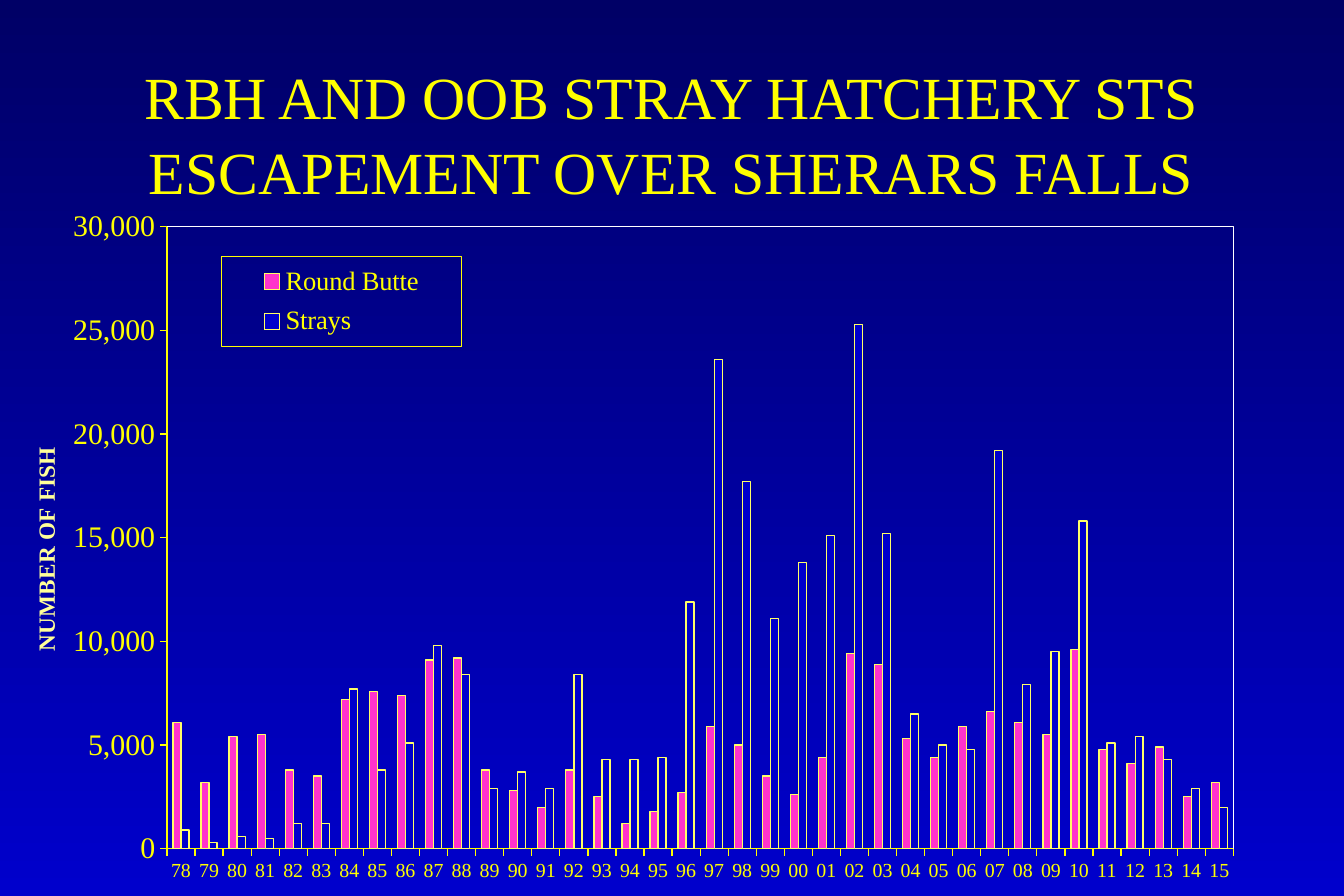
from dataclasses import dataclass

from lxml import etree
from pptx import Presentation
from pptx import oxml
from pptx.chart.data import CategoryChartData
from pptx.dml.color import RGBColor
from pptx.enum import chart as charts, text
from pptx.oxml import ns
from pptx.util import Cm, Pt

FONT = "Times New Roman"
YELLOW = "FFFF00"
PALE_YELLOW = "FFFF99"
BAR_EDGE = "FFFF66"
WHITE = "FFFFFF"
YEARS = [f"{year % 100:02d}" for year in range(1978, 2016)]


@dataclass
class FishSeries:
    name: str
    colour: str
    counts: list[int]


@dataclass
class AxisStyle:
    axis: object
    size: int
    number_format: str


FISH = [
    FishSeries("Round Butte", "FF33CC", [
        6100, 3200, 5400, 5500, 3800, 3500, 7200, 7600, 7400, 9100,
        9200, 3800, 2800, 2000, 3800, 2500, 1200, 1800, 2700, 5900,
        5000, 3500, 2600, 4400, 9400, 8900, 5300, 4400, 5900, 6600,
        6100, 5500, 9600, 4800, 4100, 4900, 2500, 3200]),
    FishSeries("Strays", "0000CC", [
        900, 300, 600, 500, 1200, 1200, 7700, 3800, 5100, 9800,
        8400, 2900, 3700, 2900, 8400, 4300, 4300, 4400, 11900, 23600,
        17700, 11100, 13800, 15100, 25300, 15200, 6500, 5000, 4800, 19200,
        7900, 9500, 15800, 5100, 5400, 4300, 2900, 2000]),
]


def rgb(colour: str) -> RGBColor:
    return RGBColor.from_string(colour)


def format_font(font, size: int, colour: str = YELLOW, bold: bool = False) -> None:
    font.name = FONT
    font.size = Pt(size)
    font.bold = bold
    font.color.rgb = rgb(colour)


def format_line(line, colour: str = YELLOW) -> None:
    line.color.rgb = rgb(colour)
    line.width = Pt(0.75)


def write_text(frame, words: str, **font_format) -> None:
    para = frame.paragraphs[0]
    span = para.add_run()
    span.text = words
    format_font(span.font, **font_format)


def place_part(part, index: int, inner: bool = False, **fractions: float) -> None:
    """Give a chart part a manual layout, in fractions of the chart."""
    for old in part.findall(ns.qn("c:layout")):
        part.remove(old)
    layout = etree.Element(ns.qn("c:layout"))
    manual = etree.SubElement(layout, ns.qn("c:manualLayout"))
    settings = {"layoutTarget": "inner"} if inner else {}
    settings |= {"xMode": "edge", "yMode": "edge"}
    settings |= {key: str(value) for key, value in fractions.items()}
    for tag, value in settings.items():
        etree.SubElement(manual, ns.qn(f"c:{tag}")).set("val", value)
    part.insert(index, layout)


def outline(colour: str):
    """Return chart shape properties with a thin line and no fill."""
    return oxml.parse_xml(
        f'<c:spPr {ns.nsdecls("c", "a")}><a:noFill/><a:ln w="9525"><a:solidFill>'
        f'<a:srgbClr val="{colour}"/></a:solidFill></a:ln></c:spPr>')


def paint_background(page) -> None:
    fill = page.background.fill
    fill.gradient()
    fill.gradient_angle = 270
    for stop, colour in zip(fill.gradient_stops, ("000066", "0000CC")):
        stop.color.rgb = rgb(colour)


def add_title(page) -> None:
    title = page.shapes.title
    title.left, title.top = Cm(2.13), Cm(1.07)
    title.width, title.height = Cm(24.28), Cm(2.54)
    frame = title.text_frame
    frame.word_wrap = True
    frame.auto_size = text.MSO_AUTO_SIZE.NONE
    frame.vertical_anchor = text.MSO_ANCHOR.TOP
    write_text(frame, "RBH AND OOB STRAY HATCHERY STS ESCAPEMENT OVER SHERARS FALLS",
               size=36)
    frame.paragraphs[0].alignment = text.PP_ALIGN.CENTER
    frame.paragraphs[0].line_spacing = 1.05


def style_axes(chart) -> None:
    for style in (AxisStyle(chart.category_axis, 12, "General"),
                  AxisStyle(chart.value_axis, 18, "#,##0")):
        axis = style.axis
        axis.has_major_gridlines = False
        axis.major_tick_mark = charts.XL_TICK_MARK.OUTSIDE
        axis.minor_tick_mark = charts.XL_TICK_MARK.NONE
        format_line(axis.format.line)
        format_font(axis.tick_labels.font, style.size)
        axis.tick_labels.number_format = style.number_format
        axis.tick_labels.number_format_is_linked = False
    values = chart.value_axis
    values.minimum_scale, values.maximum_scale = 0, 30000
    values.major_unit = 5000
    frame = values.axis_title.text_frame
    write_text(frame, "NUMBER OF FISH", size=14, colour=PALE_YELLOW, bold=True)
    title = chart.element.xpath(".//c:valAx/c:title")[0]
    body = title.find(f".//{ns.qn('a:bodyPr')}")
    body.set("rot", "-5400000")
    body.set("vert", "horz")
    place_part(title, 1, x=0.01, y=0.34)


def add_legend(chart) -> None:
    chart.has_legend = True
    chart.legend.position = charts.XL_LEGEND_POSITION.RIGHT
    chart.legend.include_in_layout = False
    format_font(chart.legend.font, 16)
    legend = chart.element.xpath(".//c:legend")[0]
    place_part(legend, 1, x=0.164, y=0.091, w=0.19, h=0.12)
    legend.find(ns.qn("c:overlay")).addnext(outline(YELLOW))


def add_fish_chart(page) -> None:
    data = CategoryChartData(number_format="#,##0")
    data.categories = YEARS
    for fish in FISH:
        data.add_series(fish.name, fish.counts)
    chart = page.shapes.add_chart(
        charts.XL_CHART_TYPE.COLUMN_CLUSTERED,
        Cm(0.3), Cm(4.01), Cm(26.87), Cm(15.88), data).chart
    chart.has_title = False
    format_font(chart.font, 10)
    plot = chart.plots[0]
    plot.gap_width, plot.overlap = 150, 0
    plot.vary_by_categories = False
    for series, fish in zip(plot.series, FISH):
        series.invert_if_negative = False
        series.format.fill.solid()
        series.format.fill.fore_color.rgb = rgb(fish.colour)
        format_line(series.format.line, BAR_EDGE)
    style_axes(chart)
    add_legend(chart)
    plot_area = chart.element.xpath(".//c:plotArea")[0]
    place_part(plot_area, 0, inner=True, x=0.121, y=0.051, w=0.844, h=0.833)
    plot_area.append(outline(WHITE))


def main() -> None:
    deck = Presentation()
    deck.slide_width, deck.slide_height = Cm(28.58), Cm(19.05)
    page = deck.slides.add_slide(deck.slide_layouts.get_by_name("Title Only"))
    paint_background(page)
    add_title(page)
    add_fish_chart(page)
    deck.save("out.pptx")


if __name__ == "__main__":
    main()
